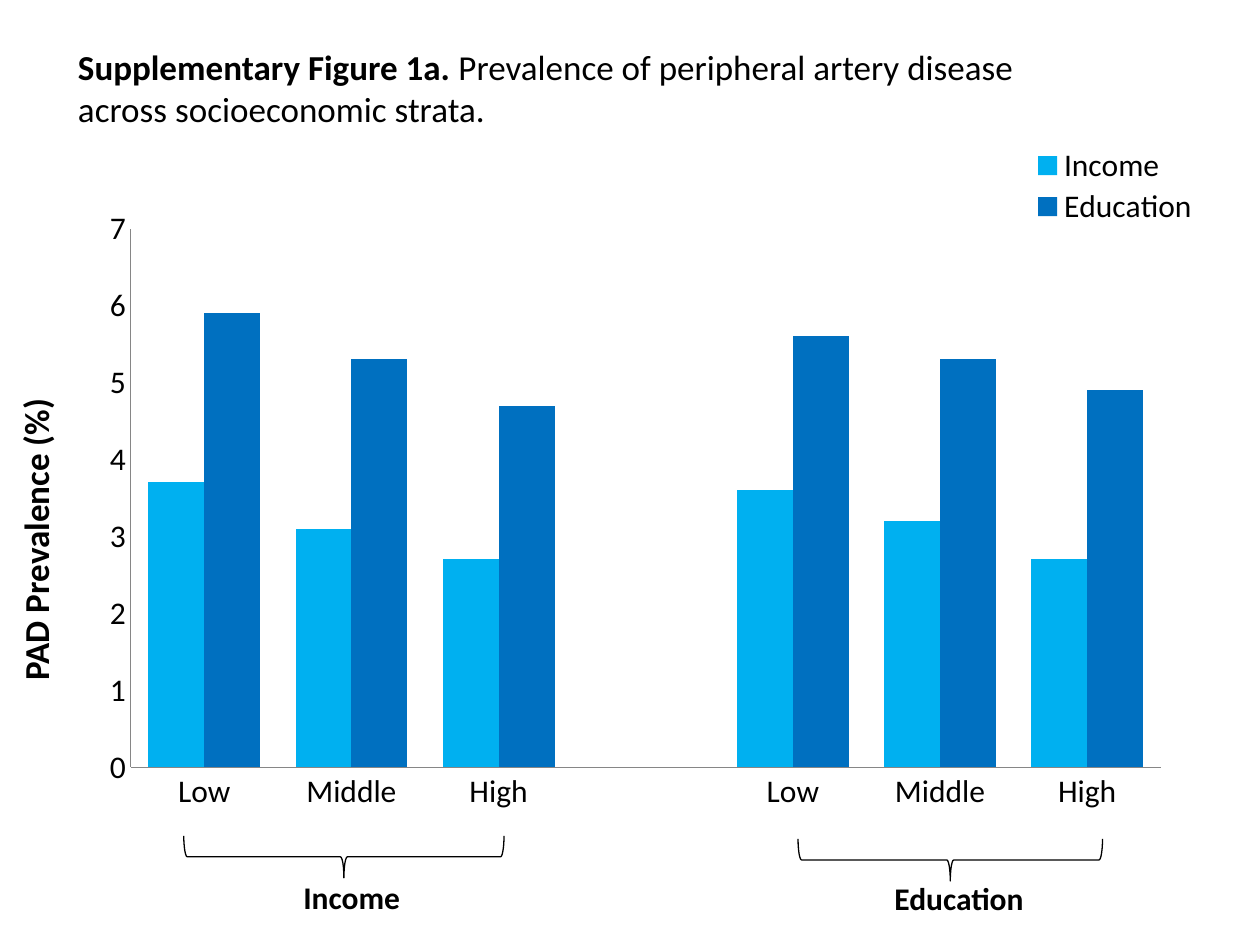
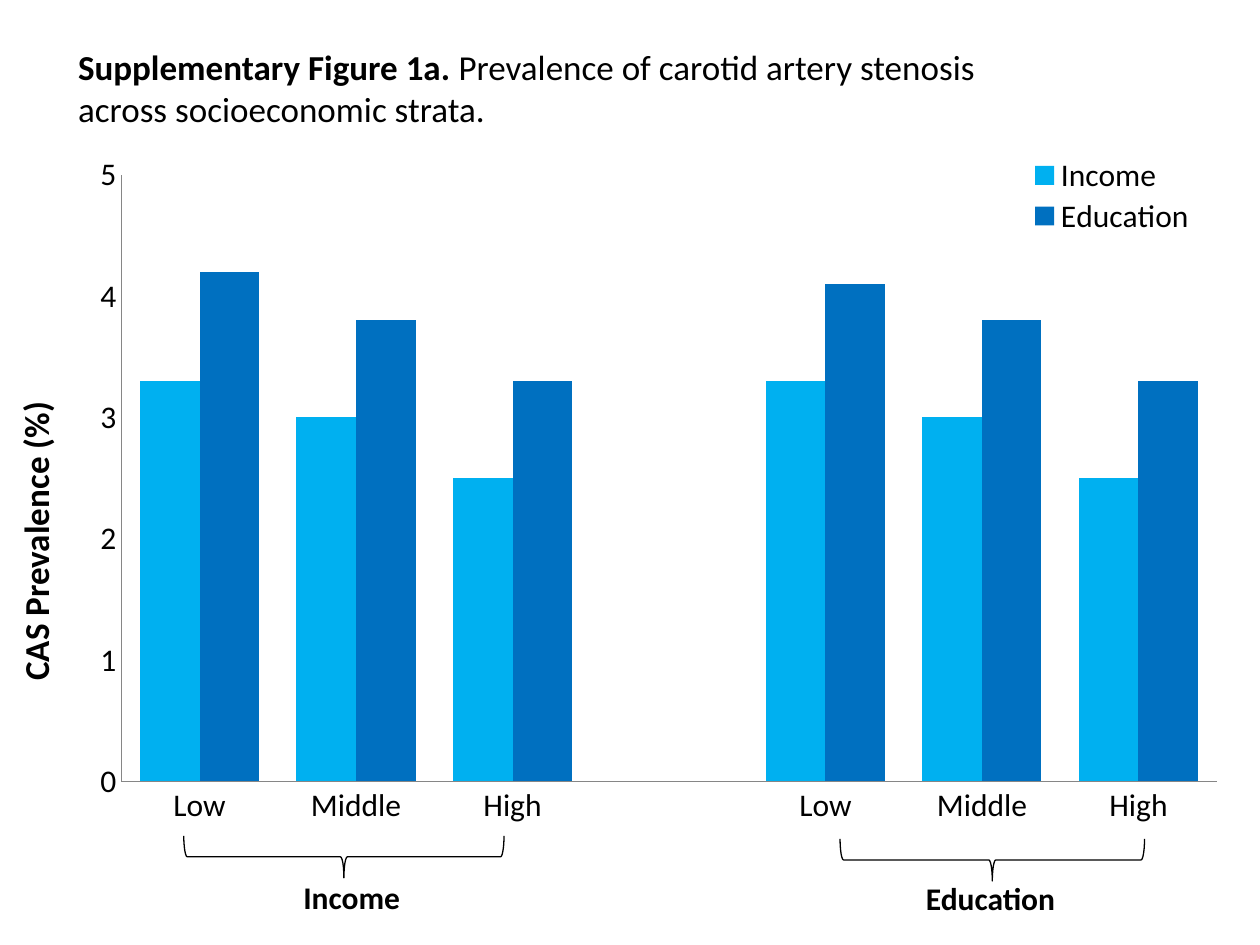
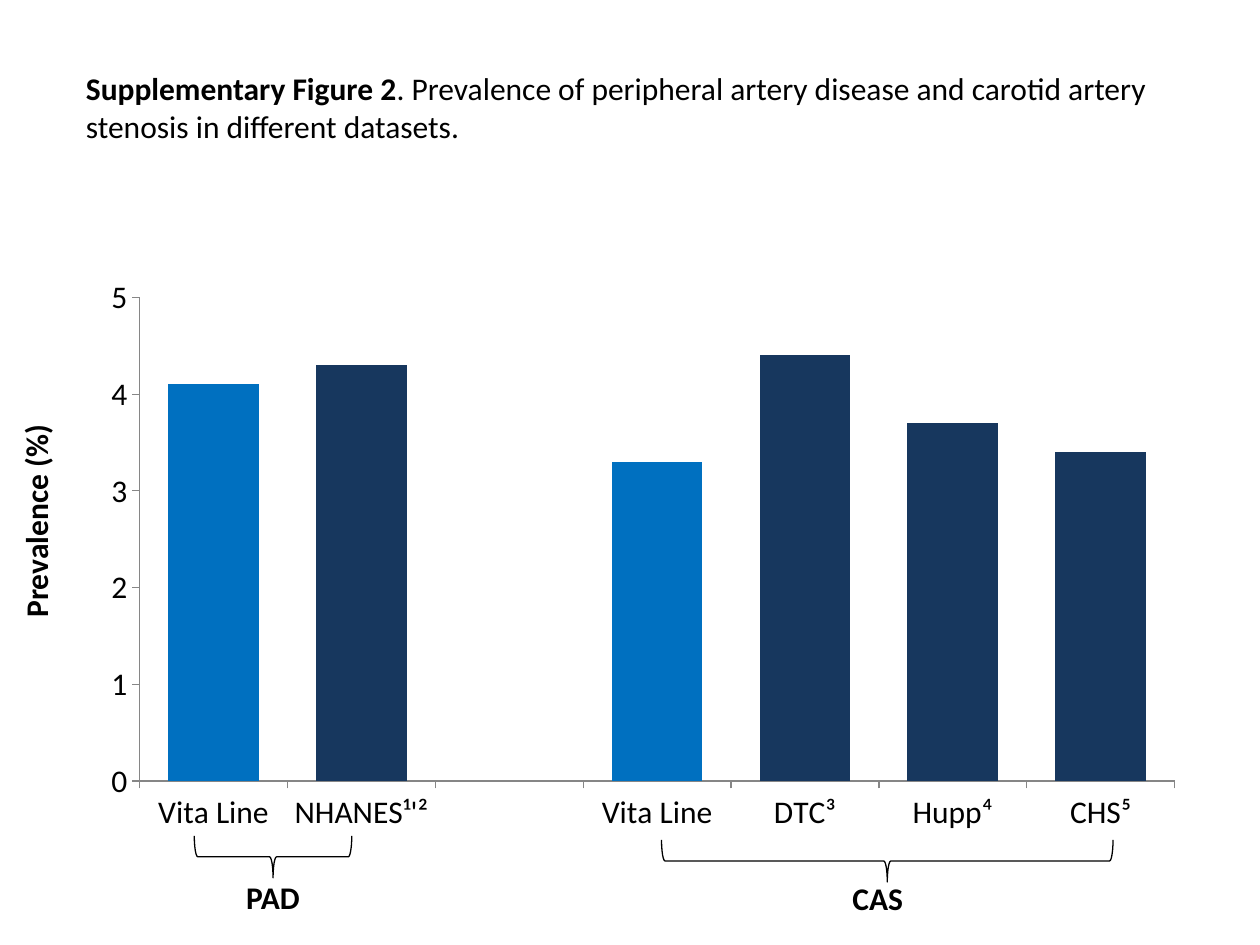
from dataclasses import dataclass
from typing import NamedTuple

from lxml.etree import SubElement
from pptx import Presentation
from pptx.chart.data import CategoryChartData
from pptx.dml.color import RGBColor
from pptx.enum.chart import XL_CHART_TYPE, XL_LEGEND_POSITION, XL_TICK_MARK
from pptx.enum.shapes import MSO_SHAPE
from pptx.enum.text import MSO_ANCHOR, PP_ALIGN
from pptx.oxml.ns import qn
from pptx.util import Inches, Pt

COLUMNS, ROWS = 120, 90
CELL = Inches(10) / COLUMNS


@dataclass(frozen=True)
class Theme:
    font: str = "Calibri"
    ink: RGBColor = RGBColor(0, 0, 0)
    paper: RGBColor = RGBColor(255, 255, 255)
    axis: RGBColor = RGBColor(0x86, 0x86, 0x86)
    sky: RGBColor = RGBColor(0x00, 0xB0, 0xF0)
    blue: RGBColor = RGBColor(0x00, 0x70, 0xC0)
    navy: RGBColor = RGBColor(0x17, 0x37, 0x5E)
    large: int = 20
    body: int = 18
    hairline: float = 0.75


THEME = Theme()


class Box(NamedTuple):
    """Left, top, width and height in grid columns and rows."""
    left: float
    top: float
    width: float
    height: float

    def emu(self):
        return [round(length * CELL) for length in self]

    def turned(self):
        """Frame that fills this box after a quarter turn."""
        shift = (self.width - self.height) / 2
        return Box(self.left + shift, self.top - shift, self.height, self.width)


class Group(NamedTuple):
    """A named run of categories: its brace and its label."""
    name: str
    brace: Box
    label: Box
    align: PP_ALIGN = PP_ALIGN.LEFT


class Bars(NamedTuple):
    """Values of one series, its colour and the points coloured apart."""
    name: str
    values: tuple
    color: RGBColor
    accents: dict = {}


@dataclass
class Figure:
    caption: tuple
    caption_box: Box
    axis_title: str
    axis_box: Box
    size: int
    chart_box: Box
    plot: tuple
    top_value: int
    categories: tuple
    series: list
    groups: list
    legend: tuple = ()
    tick: XL_TICK_MARK = XL_TICK_MARK.NONE
    overlap: int = 0


def add_text(slide, box, runs, size, align=PP_ALIGN.LEFT, rotation=0):
    """Place (text, bold) runs as one paragraph."""
    frame = box.turned() if rotation else box
    textbox = slide.shapes.add_textbox(*frame.emu())
    textbox.rotation = rotation
    body = textbox.text_frame
    body.word_wrap = True
    body.vertical_anchor = MSO_ANCHOR.TOP
    paragraph = body.paragraphs[0]
    paragraph.alignment = align
    for text, bold in runs:
        run = paragraph.add_run()
        run.text = text
        font = run.font
        font.name, font.size, font.bold = THEME.font, Pt(size), bold
        font.color.rgb = THEME.ink


def add_group(slide, group):
    brace = slide.shapes.add_shape(MSO_SHAPE.RIGHT_BRACE, *group.brace.turned().emu())
    brace.rotation = 90
    brace.shadow.inherit = False
    brace.fill.solid()
    brace.fill.fore_color.rgb = THEME.paper
    brace.line.color.rgb = THEME.ink
    brace.line.width = Pt(THEME.hairline)
    add_text(slide, group.label, [(group.name, True)], THEME.body, group.align)


def fill_layout(layout, shares, inner=False):
    """Fix a chart part at x, y, w, h shares of the chart."""
    for old in list(layout):
        layout.remove(old)
    manual = SubElement(layout, qn("c:manualLayout"))
    settings = [("layoutTarget", "inner")] if inner else []
    settings += [("xMode", "edge"), ("yMode", "edge"), *zip("xywh", shares)]
    for tag, value in settings:
        SubElement(manual, qn(f"c:{tag}")).set("val", str(value))


def style_axis(axis, tick):
    axis.has_major_gridlines = False
    axis.major_tick_mark = tick
    axis.minor_tick_mark = XL_TICK_MARK.NONE
    axis.format.line.color.rgb = THEME.axis
    axis.format.line.width = Pt(THEME.hairline)


def paint(bar, color):
    bar.format.fill.solid()
    bar.format.fill.fore_color.rgb = color


def add_bars(slide, figure):
    data = CategoryChartData()
    data.categories = figure.categories
    for bars in figure.series:
        data.add_series(bars.name, bars.values)
    chart = slide.shapes.add_chart(
        XL_CHART_TYPE.COLUMN_CLUSTERED, *figure.chart_box.emu(), data).chart
    chart.has_title = False
    chart.font.name, chart.font.size = THEME.font, Pt(THEME.body)
    chart.font.color.rgb = THEME.ink

    # Axes
    style_axis(chart.category_axis, figure.tick)
    scale = chart.value_axis
    style_axis(scale, figure.tick)
    scale.minimum_scale, scale.maximum_scale = 0, figure.top_value
    scale.major_unit = 1

    # Columns
    plot = chart.plots[0]
    plot.vary_by_categories = False
    plot.gap_width, plot.overlap = 63, figure.overlap
    for drawn, bars in zip(plot.series, figure.series):
        drawn.invert_if_negative = False
        paint(drawn, bars.color)
        for index, color in bars.accents.items():
            paint(drawn.points[index], color)

    # Plot area and legend
    area = chart.element.find(f".//{qn('c:plotArea')}")
    layout = area.find(qn("c:layout"))
    if layout is None:
        layout = area.makeelement(qn("c:layout"))
        area.insert(0, layout)
    fill_layout(layout, figure.plot, inner=True)
    chart.has_legend = bool(figure.legend)
    if figure.legend:
        chart.legend.position = XL_LEGEND_POSITION.RIGHT
        chart.legend.include_in_layout = False
        key = chart.element.find(f".//{qn('c:legend')}")
        layout = key.find(qn("c:layout"))
        if layout is None:
            layout = key.makeelement(qn("c:layout"))
            key.find(qn("c:legendPos")).addnext(layout)
        fill_layout(layout, figure.legend)


def add_figure(deck, figure):
    slide = deck.slides.add_slide(deck.slide_layouts[6])
    add_bars(slide, figure)
    for group in figure.groups:
        add_group(slide, group)
    add_text(slide, figure.axis_box, [(figure.axis_title, True)], figure.size, rotation=270)
    add_text(slide, figure.caption_box, figure.caption, figure.size)


def strata_figure(measure, disease, caption_width, education_brace, education_label,
                  income, education, **chart):
    """Figure of prevalence by income and by education."""
    return Figure(
        caption=(("Supplementary Figure 1a. ", True),
                 (f"Prevalence of {disease} across socioeconomic strata.", False)),
        caption_box=Box(6.25, 3.75, caption_width, 13.3),
        axis_title=f"{measure} Prevalence (%)",
        axis_box=Box(0.75, 35, 5.3, 31),
        size=THEME.large,
        categories=("Low", "Middle", "High", "", "Low", "Middle", "High"),
        series=[Bars("Income", income, THEME.sky), Bars("Education", education, THEME.blue)],
        groups=[
            Group("Income", Box(17.5, 79.6, 30.5, 4), Box(27, 83, 13, 4.8), PP_ALIGN.CENTER),
            Group("Education", Box(education_brace, 79.9, 29, 4),
                  Box(education_label, 83.1, 16, 4.8))],
        **chart)


FIGURES = [
    strata_figure(
        "PAD", "peripheral artery disease", 92.75, 76, 84,
        (3.7, 3.1, 2.7, None, 3.6, 3.2, 2.7), (5.9, 5.3, 4.7, None, 5.6, 5.3, 4.9),
        chart_box=Box(7, 13, 109, 67.5), plot=(0.05, 0.13, 0.9, 0.76),
        top_value=7, legend=(0.83, 0.01, 0.16, 0.12)),
    strata_figure(
        "CAS", "carotid artery stenosis", 89.75, 80, 87,
        (3.3, 3, 2.5, None, 3.3, 3, 2.5), (4.2, 3.8, 3.3, None, 4.1, 3.8, 3.3),
        chart_box=Box(6, 14, 111, 66.4), plot=(0.05, 0.04, 0.94, 0.87),
        top_value=5, legend=(0.82, 0.01, 0.16, 0.12)),
    Figure(
        caption=(("Supplementary Figure 2", True),
                 (". Prevalence of peripheral artery disease and carotid artery "
                  "stenosis in different datasets.", False)),
        caption_box=Box(7, 6, 105, 8.5),
        axis_title="Prevalence (%)",
        axis_box=Box(1, 38, 4.8, 22),
        size=THEME.body,
        chart_box=Box(8, 25, 106, 55.5), plot=(0.05, 0.06, 0.93, 0.83),
        top_value=5,
        categories=("Vita Line", "NHANES¹'²", "", "Vita Line", "DTC³", "Hupp⁴", "CHS⁵"),
        series=[Bars("Series 1", (4.1, 4.3, None, 3.3, 4.4, 3.7, 3.4), THEME.navy,
                     {0: THEME.blue, 3: THEME.blue})],
        groups=[
            Group("PAD", Box(18.5, 79.6, 15, 4), Box(22, 83, 8, 4.8), PP_ALIGN.CENTER),
            Group("CAS", Box(63, 80, 43, 4), Box(80, 83.1, 10, 4.8))],
        tick=XL_TICK_MARK.OUTSIDE, overlap=46),
]


def main():
    deck = Presentation()
    deck.slide_width, deck.slide_height = round(COLUMNS * CELL), round(ROWS * CELL)
    for figure in FIGURES:
        add_figure(deck, figure)
    deck.save("out.pptx")


if __name__ == "__main__":
    main()
